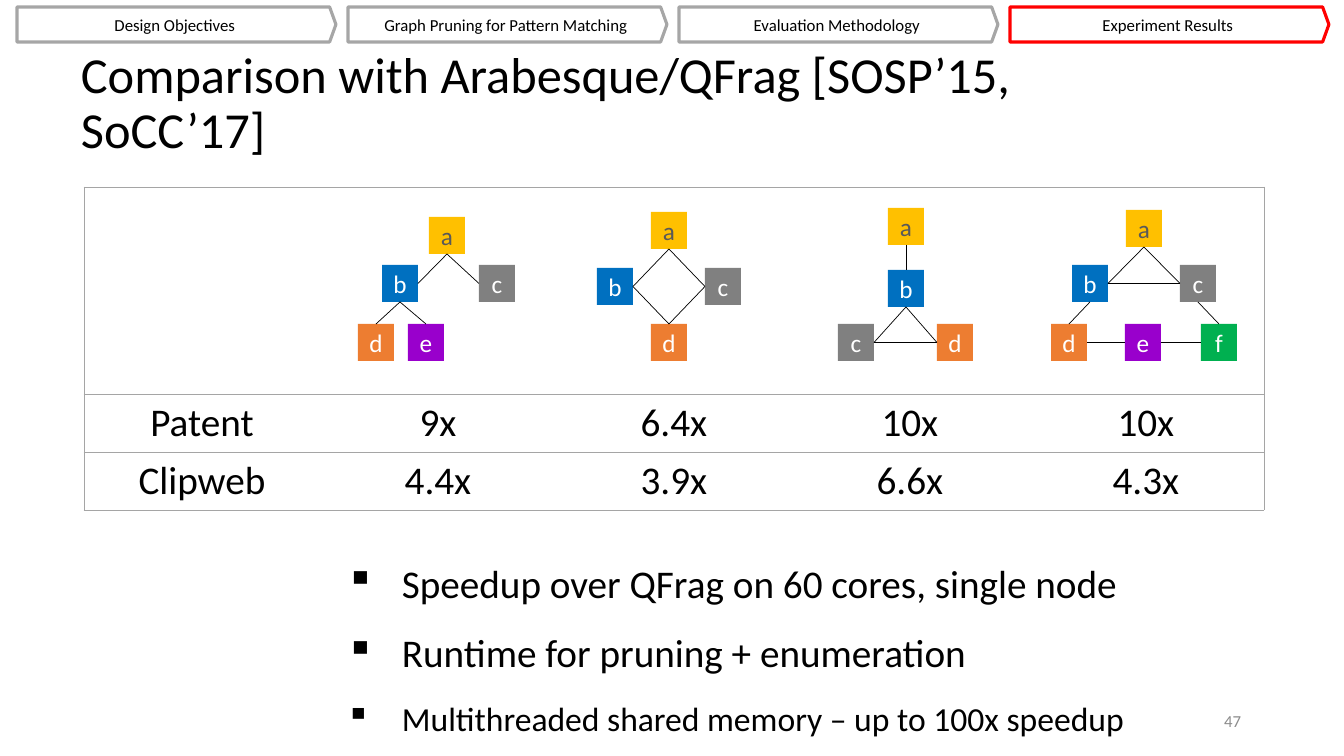
"""Build the slide that compares graph pattern speedups."""
from lxml import etree
from pptx import Presentation, util as u
from pptx.dml.color import RGBColor
from pptx.enum import shapes, text
from pptx.oxml.ns import qn

SCALE = 914400 / 100.8
BLACK, WHITE, GREY = "000000", "FFFFFF", "A5A5A5"

TITLE = "Comparison with Arabesque/QFrag [SOSP’15, SoCC’17]"
NUMBER = "47"
STEPS = ["Design Objectives", "Graph Pruning for Pattern Matching",
         "Evaluation Methodology", "Experiment Results"]
POINTS = [("Speedup over QFrag on 60 cores, single node", 28),
          ("Runtime for pruning + enumeration", 28),
          ("Multithreaded shared memory – up to 100x speedup", 24)]
ROWS = [["", "", "", "", ""],
        ["Patent", "9x", "6.4x", "10x", "10x"],
        ["Clipweb", "4.4x", "3.9x", "6.6x", "4.3x"]]
HEIGHTS = [207, 58, 58]
GOLD, BLUE, SLATE = "FFC000", "0070C0", "808080"
ORANGE, PURPLE, GREEN = "ED7D31", "9900CC", "00B050"
TONES = {"a": GOLD, "b": BLUE, "c": SLATE, "d": ORANGE, "e": PURPLE, "f": GREEN}
SITES = {"top": 0, "left": 1, "low": 2, "right": 3}
GRAPHS = [
    ({"a": (429, 217), "b": (382, 265), "c": (479, 265), "d": (358, 324),
      "e": (408, 324)},
     ["a low b right", "c left a low", "b low d top", "e top b low"]),
    ({"a": (651, 212), "b": (597, 268), "c": (705, 268), "d": (651, 324)},
     ["a low b right", "c left a low", "b right d top", "d top c left"]),
    ({"a": (888, 208), "b": (888, 270), "c": (838, 324), "d": (937, 324)},
     ["a low b top", "b low c right", "b low d left", "d left c right"]),
    ({"a": (1126, 210), "b": (1072, 265), "c": (1180, 265), "d": (1051, 324),
      "e": (1125, 324), "f": (1201, 324)},
     ["a low b right", "c left a low", "b low d top", "c left b right",
      "e left d right", "c low f top", "f left e right"]),
]


def px(*vals):
    return [u.Emu(round(v * SCALE)) for v in vals]


def tint(code):
    return RGBColor.from_string(code)


def write(par, words, size=18, color=BLACK, align="CENTER"):
    par.alignment = getattr(text.PP_ALIGN, align)
    run = par.add_run()
    run.text = words
    run.font.size, run.font.name = u.Pt(size), "Calibri"
    run.font.color.rgb = tint(color)


def block(slide, box, kind=None, fill=None, edge=None, anchor="MIDDLE"):
    if kind is None:
        item = slide.shapes.add_textbox(*px(*box))
    else:
        item = slide.shapes.add_shape(kind, *px(*box))
        item.shadow.inherit = False
        for part, code in ((item.fill, fill), (item.line.fill, edge)):
            if code:
                part.solid()
                part.fore_color.rgb = tint(code)
            else:
                part.background()
    item.text_frame.word_wrap = True
    item.text_frame.vertical_anchor = getattr(text.MSO_ANCHOR, anchor)
    return item


def border(cell, sides):
    props = cell._tc.get_or_add_tcPr()
    for side in "LRTB":
        line = etree.SubElement(props, qn("a:ln" + side), w="6350")
        if side in sides:
            solid = etree.SubElement(line, qn("a:solidFill"))
            etree.SubElement(solid, qn("a:srgbClr"), val=GREY)
        else:
            etree.SubElement(line, qn("a:noFill"))
    cell.fill.background()


def grid(slide):
    last = len(ROWS[0]) - 1
    frame = slide.shapes.add_table(len(ROWS), last + 1,
                                   *px(84, 187, 1180, sum(HEIGHTS)))
    table = frame.table
    table.first_row = table.horz_banding = False
    for row, high in zip(table.rows, HEIGHTS):
        row.height = px(high)[0]
    for r, line in enumerate(ROWS):
        for c, words in enumerate(line):
            cell = table.cell(r, c)
            cell.vertical_anchor = text.MSO_ANCHOR.MIDDLE
            if words:
                write(cell.text_frame.paragraphs[0], words, size=28)
            border(cell, "TB" + "L" * (c == 0) + "R" * (c == last))


def graph(slide, spots, edges):
    nodes = {}
    for name, (x, y) in spots.items():
        node = block(slide, (x, y, 36, 37), shapes.MSO_SHAPE.RECTANGLE,
                     fill=TONES[name])
        write(node.text_frame.paragraphs[0], name,
              color="595959" if name == "a" else WHITE)
        nodes[name] = node
    for edge in edges:
        head, start, tail, end = edge.split()
        line = slide.shapes.add_connector(shapes.MSO_CONNECTOR.STRAIGHT, 0, 0, 0, 0)
        line.begin_connect(nodes[head], SITES[start])
        line.end_connect(nodes[tail], SITES[end])
        line.line.width = u.Pt(0.5)
        line.line.color.rgb = tint(BLACK)
        etree.SubElement(line._element.spPr, qn("a:effectLst"))


def points(slide):
    frame = block(slide, (336, 554, 874, 192), anchor="TOP").text_frame
    for i, (words, size) in enumerate(POINTS):
        par = frame.add_paragraph() if i else frame.paragraphs[0]
        write(par, words, size=size, align="JUSTIFY")
        par.space_after = u.Pt(16)
        props = par._p.get_or_add_pPr()
        indent = px(56)[0]
        props.set("marL", str(indent))
        props.set("indent", str(-indent))
        etree.SubElement(props, qn("a:buChar"), char="▪")


def steps(slide):
    for i, words in enumerate(STEPS):
        edge = "FF0000" if i == len(STEPS) - 1 else "A6A6A6"
        step = block(slide, (17 + 331 * i, 7, 319, 35),
                     shapes.MSO_SHAPE.PENTAGON, edge=edge)
        step.adjustments[0] = 0.18
        step.line.width = u.Pt(2.25)
        write(step.text_frame.paragraphs[0], words, size=12)


def main():
    deck = Presentation()
    deck.slide_width, deck.slide_height = px(1344, 756)
    slide = deck.slides.add_slide(deck.slide_layouts[6])
    title = block(slide, (71, 75, 1143, 59)).text_frame.paragraphs[0]
    write(title, TITLE, size=36, align="LEFT")
    title.line_spacing = 0.9
    number = block(slide, (949, 701, 302, 40)).text_frame.paragraphs[0]
    write(number, NUMBER, size=12, color="8C8C8C", align="RIGHT")
    points(slide)
    grid(slide)
    for spots, edges in GRAPHS:
        graph(slide, spots, edges)
    steps(slide)
    deck.save("out.pptx")


if __name__ == "__main__":
    main()
